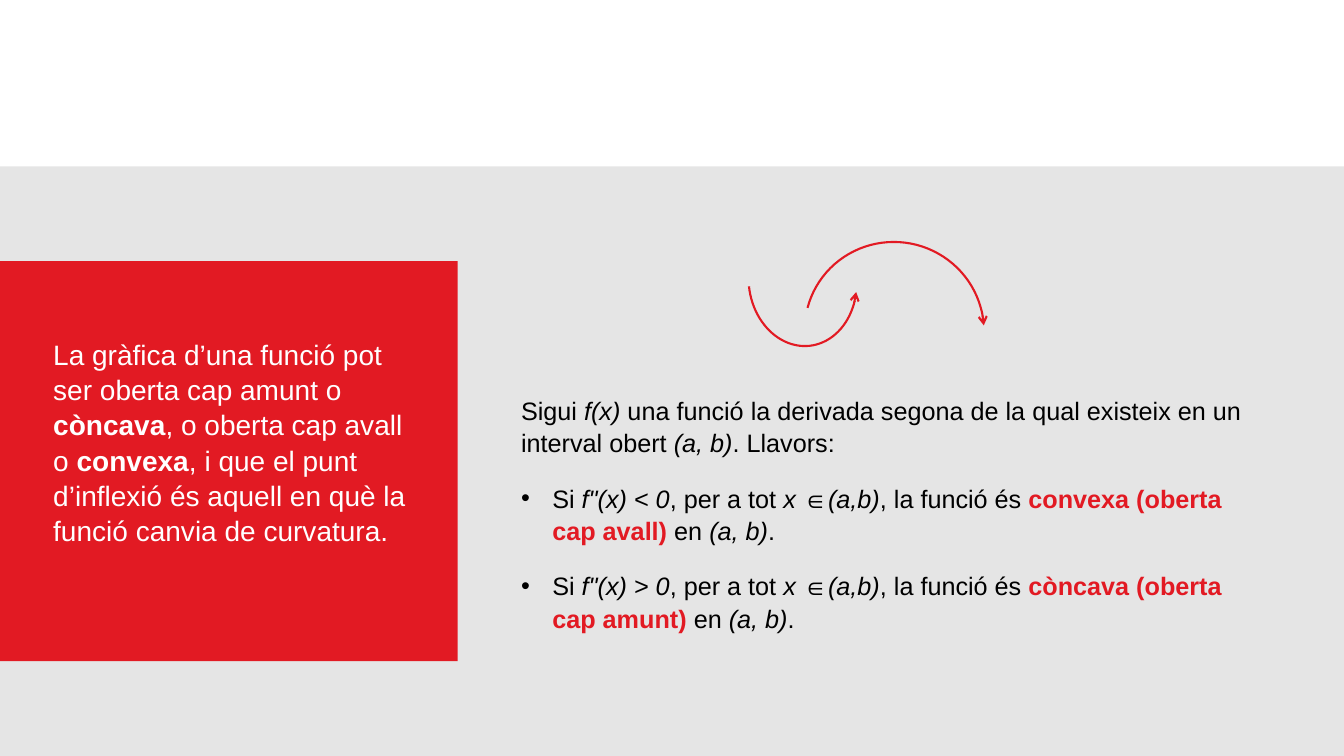
from pptx import Presentation
from pptx.dml.color import RGBColor
from pptx.enum.shapes import MSO_SHAPE
from pptx.oxml.ns import qn
from pptx.util import Inches, Pt
from lxml.etree import SubElement

COLORS = {"red": "E21A23", "gray": "E5E5E5", "white": "FFFFFF", "black": "000000"}
INDENT = 0.31


def color(name):
    return RGBColor.from_string(COLORS[name])


def add_panel(page, left, top, width, height, fill):
    panel = page.shapes.add_shape(
        MSO_SHAPE.RECTANGLE, Inches(left), Inches(top), Inches(width), Inches(height))
    panel.shadow.inherit = False
    panel.fill.solid()
    panel.fill.fore_color.rgb = color(fill)
    panel.line.fill.background()


def add_arc_arrow(page, left, top, width, height, rotation, flipped=False):
    arc = page.shapes.add_shape(
        MSO_SHAPE.ARC, Inches(left), Inches(top), Inches(width), Inches(height))
    arc.shadow.inherit = False
    arc.adjustments[0] = 162
    arc.adjustments[1] = 43.133
    arc.rotation = rotation
    if flipped:
        arc._element.spPr.find(qn("a:xfrm")).set("flipV", "1")
    arc.fill.background()
    arc.line.color.rgb = color("red")
    arc.line.width = Pt(1.5)
    SubElement(arc.line._get_or_add_ln(), qn("a:tailEnd"), type="arrow")


def add_bullet(para):
    properties = para._p.get_or_add_pPr()
    properties.set("marL", str(Inches(INDENT)))
    properties.set("indent", str(-Inches(INDENT)))
    SubElement(properties, qn("a:buFont"), typeface="Arial")
    SubElement(properties, qn("a:buChar"), char="•")


def add_text(page, left, top, width, height, spans, size, fill, spacing, bullet=False):
    box = page.shapes.add_textbox(Inches(left), Inches(top), Inches(width), Inches(height))
    box.text_frame.word_wrap = True
    para = box.text_frame.paragraphs[0]
    para.line_spacing = spacing
    if bullet:
        add_bullet(para)
    para.font.name = "Arial"
    para.font.size = Pt(size)
    para.font.color.rgb = color(fill)
    for text, style in spans:
        span = para.add_run()
        span.text = text
        span.font.name = "Arial"
        span.font.size = Pt(size)
        span.font.bold = style in ("bold", "accent")
        span.font.italic = style == "italic"
        span.font.color.rgb = color("red" if style == "accent" else fill)


def add_body(page, top, spans, bullet=False):
    add_text(page, 5.07, top, 7.43, 0.71, spans, 18, "black", 1.07, bullet)


def add_curvature_rule(page, top, sign, conclusion):
    add_body(page, top, [
        ("Si ", ""), (f'f"(x) {sign} 0', "italic"), (", per a tot ", ""),
        ("x ∈(a,b)", "italic"), (", la funció és ", ""),
        (f"{conclusion} ", "accent"), ("en ", ""), ("(a, b)", "italic"), (".", ""),
    ], bullet=True)


def main():
    deck = Presentation()
    deck.slide_width, deck.slide_height = Inches(13.33), Inches(7.5)
    page = deck.slides.add_slide(deck.slide_layouts[6])

    add_panel(page, 0, 1.65, 13.33, 5.85, "gray")
    add_panel(page, 0, 2.59, 4.54, 3.97, "red")
    add_text(page, 0.43, 3.28, 3.77, 2.12, [
        ("La gràfica d’una funció pot ser oberta cap amunt o ", ""),
        ("còncava", "bold"),
        (", o oberta cap avall o ", ""),
        ("convexa", "bold"),
        (", i que el punt d’inflexió és aquell en què la funció canvia de curvatura.", ""),
    ], 20, "white", 1.05)

    add_arc_arrow(page, 7.31, 2.25, 1.3, 1.07, 83.9, flipped=True)
    add_arc_arrow(page, 7.99, 2.39, 1.76, 1.78, 284.7)

    add_body(page, 3.85, [
        ("Sigui ", ""), ("f(x)", "italic"),
        (" una funció la derivada segona de la qual existeix en un interval obert ", ""),
        ("(a, b)", "italic"), (". Llavors:", ""),
    ])
    add_curvature_rule(page, 4.72, "<", "convexa (oberta cap avall)")
    add_curvature_rule(page, 5.59, ">", "còncava (oberta cap amunt)")

    deck.save("out.pptx")


if __name__ == "__main__":
    main()
